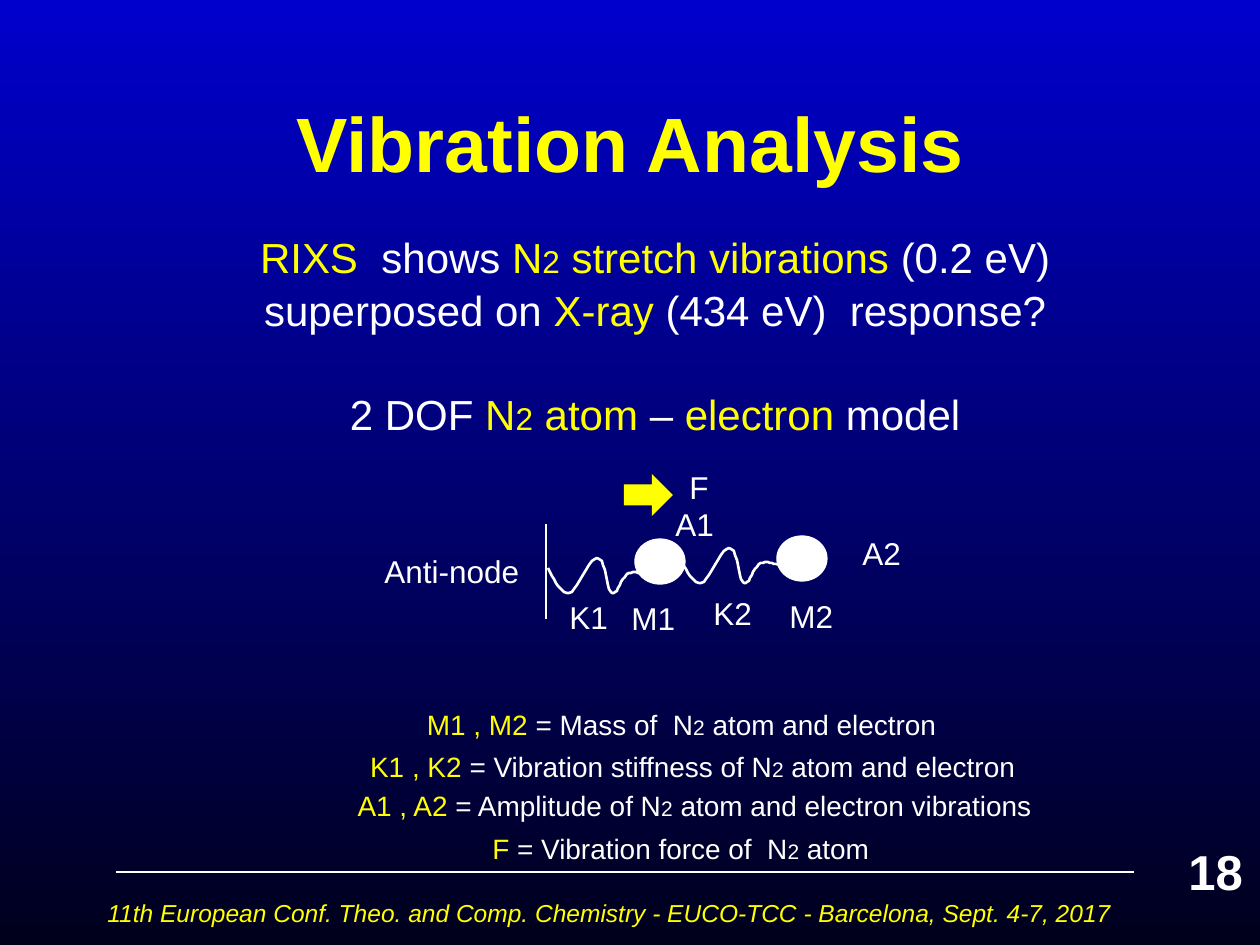
from lxml import etree
from pptx import Presentation
from pptx import util as u
from pptx.dml.color import RGBColor
from pptx.enum import shapes, text
from pptx.oxml.ns import qn

PX = 914400 / 126  # EMU per px
YELLOW = RGBColor(0xFF, 0xFF, 0x00)
WHITE = RGBColor(0xFF, 0xFF, 0xFF)
TOP_BLUE = RGBColor(0x00, 0x00, 0xCC)
BOTTOM_BLUE = RGBColor(0x00, 0x00, 0x1C)
FONT = "Arial"
LIST_INDENT = 63

# Bezier segments of a spring, relative to its left end
SPRING = [
    [(6, 13), (13, 26), (21, 25)],
    [(29, 23), (42, -10), (49, -10)],
    [(58, -10), (59, 23), (64, 25)],
    [(69, 28), (74, 8), (81, 5)],
    [(87, 3), (93, 5), (101, 8)],
]


def px(length):
    return u.Emu(round(length * PX))


def emu_box(*box):
    return [px(length) for length in box]


def style(run, size, color, bold=False, italic=False):
    font = run.font
    font.name, font.size, font.color.rgb = FONT, u.Pt(size), color
    font.bold, font.italic = bold, italic


def write(paragraph, runs, align=text.PP_ALIGN.LEFT, **weight):
    """Fill a paragraph with (text, size, color) runs."""
    paragraph.alignment = align
    for words, size, color in runs:
        run = paragraph.add_run()
        run.text = words
        style(run, size, color, **weight)


def add_text(slide, box, runs, indent=0, **options):
    frame = slide.shapes.add_textbox(*emu_box(*box)).text_frame
    frame.word_wrap = True
    frame.margin_left = u.Inches(0.1) + px(indent)
    write(frame.paragraphs[0], runs, **options)
    return frame


def add_line(slide, *ends):
    line = slide.shapes.add_connector(shapes.MSO_CONNECTOR.STRAIGHT, *emu_box(*ends))
    line.line.color.rgb, line.line.width = WHITE, u.Pt(0.75)
    etree.SubElement(line._element.spPr, qn("a:effectLst"))


def add_solid(slide, kind, box, color):
    shape = slide.shapes.add_shape(kind, *emu_box(*box))
    shape.shadow.inherit = False
    shape.fill.solid()
    shape.fill.fore_color.rgb = color
    shape.line.fill.background()
    return shape


def bezier(points, t):
    weights = ((1 - t) ** 3, 3 * t * (1 - t) ** 2, 3 * t * t * (1 - t), t ** 3)
    return tuple(sum(w * point[axis] for w, point in zip(weights, points)) for axis in (0, 1))


def add_spring(slide, left, top, steps=10):
    vertices, start = [], (0, 0)
    for segment in SPRING:
        vertices += [bezier([start, *segment], step / steps) for step in range(1, steps + 1)]
        start = segment[-1]
    builder = slide.shapes.build_freeform(left, top, scale=PX)
    builder.add_line_segments([(left + x, top + y) for x, y in vertices], close=False)
    spring = builder.convert_to_shape()
    spring.shadow.inherit = False
    spring.fill.background()
    spring.line.color.rgb, spring.line.width = WHITE, u.Pt(1.5)


def paint_background(slide):
    fill = slide.background.fill
    fill.gradient()
    fill.gradient_angle = 270
    for stop, color in zip(fill.gradient_stops, (TOP_BLUE, BOTTOM_BLUE)):
        stop.color.rgb = color


def place_title(slide, box):
    title = slide.shapes.title
    title.left, title.top, title.width, title.height = emu_box(*box)
    title.text_frame.text = "Vibration Analysis"
    title.text_frame.vertical_anchor = text.MSO_ANCHOR.MIDDLE
    paragraph = title.text_frame.paragraphs[0]
    paragraph.alignment = text.PP_ALIGN.CENTER
    style(paragraph.runs[0], 44, YELLOW, bold=True)


def add_question(slide, box):
    center = text.PP_ALIGN.CENTER
    frame = add_text(slide, box, [
        ("RIXS  ", 24, YELLOW), ("shows ", 24, WHITE), ("N", 24, YELLOW), ("2", 18, YELLOW),
        (" stretch vibrations ", 24, YELLOW), ("(0.2 eV) superposed on", 24, WHITE),
        (" X-ray ", 24, YELLOW), ("(434 eV)  response?", 24, WHITE),
    ], indent=LIST_INDENT, align=center)
    model = frame.add_paragraph()
    write(model, [
        ("2 DOF ", 24, WHITE), ("N", 24, YELLOW), ("2", 18, YELLOW), (" atom ", 24, YELLOW),
        ("– ", 24, WHITE), ("electron", 24, YELLOW), (" model", 24, WHITE),
    ], align=center)
    model.space_before = u.Pt(29)
    for paragraph in frame.paragraphs:
        paragraph.line_spacing = 1.05


def add_oscillator(slide, left, top):
    """Two masses on two springs, fixed to a wall."""
    labels = [
        ("M1", 247, 131, 84), ("K1", 185, 130, 84), ("K2", 329, 126, 84), ("M2", 405, 129, 84),
        ("Anti-node", 0, 84, 199), ("F", 305, 0, 84), ("A2", 478, 66, 84), ("A1", 291, 37, 84),
    ]
    for label, x, y, width in labels:
        add_text(slide, (left + x, top + y, width, 50), [(label, 18, WHITE)])
    add_solid(slide, shapes.MSO_SHAPE.RIGHT_ARROW, (left + 252, top + 12, 49, 42), YELLOW)
    add_line(slide, left + 174, top + 62, left + 174, top + 157)
    for x, y in ((176, 106), (308, 96)):
        add_spring(slide, left + x, top + y)
    for x, y in ((263, 77), (405, 74)):
        mass = add_solid(slide, shapes.MSO_SHAPE.OVAL, (left + x, top + y, 50, 45), WHITE)
        mass.line.color.rgb, mass.line.width = WHITE, u.Pt(0.75)


def add_legend(slide, left, top):
    entries = [
        (64, 0, 630, "M1 , M2 ", "= Mass of  N", " atom and electron"),
        (0, 42, 780, "K1 , K2 ", "= Vibration stiffness of N", " atom and electron"),
        (2, 81, 780, "A1 , A2 ", "= Amplitude of N", " atom and electron vibrations"),
        (67, 124, 630, "F ", "= Vibration force of  N", " atom "),
    ]
    for x, y, width, symbol, meaning, ending in entries:
        add_text(slide, (left + x, top + y, width, 47), [
            (symbol, 16, YELLOW), (meaning, 16, WHITE), ("2", 12, WHITE), (ending, 16, WHITE),
        ], indent=LIST_INDENT, align=text.PP_ALIGN.CENTER)


def add_footer(slide, left, top):
    add_line(slide, left + 21, top, left + 1039, top)
    conference = "11th European Conf. Theo. and Comp. Chemistry - EUCO-TCC - Barcelona, Sept. 4-7, 2017"
    add_text(slide, (left, top + 20, 1071, 53), [(conference, 14, YELLOW)], italic=True)
    number = add_text(slide, (left + 1081, top - 43, 94, 72), [("18", 28, WHITE)], bold=True)
    number.margin_top = px(12)


def main():
    presentation = Presentation()
    presentation.slide_width, presentation.slide_height = px(1260), px(945)
    slide = presentation.slides.add_slide(presentation.slide_layouts[5])
    paint_background(slide)
    place_title(slide, (95, 63, 1071, 158))
    add_question(slide, (88, 223, 1071, 233))
    add_oscillator(slide, 372, 462)
    add_legend(slide, 271, 701)
    add_footer(slide, 95, 872)
    presentation.save("out.pptx")


if __name__ == "__main__":
    main()
